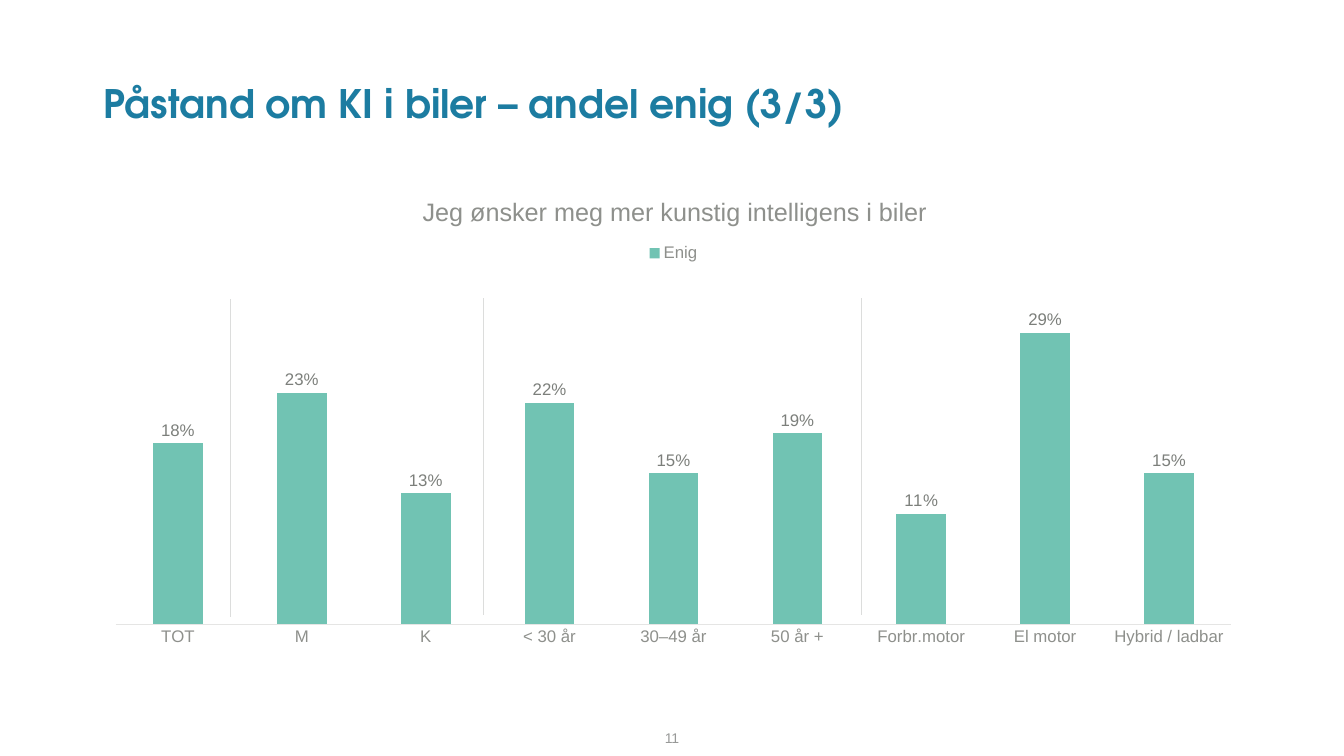
from lxml import etree
from pptx import Presentation
from pptx.chart.data import CategoryChartData
from pptx.dml.color import RGBColor
from pptx.enum.chart import XL_CHART_TYPE, XL_LABEL_POSITION, XL_LEGEND_POSITION, XL_TICK_MARK
from pptx.enum.shapes import MSO_CONNECTOR
from pptx.enum.text import MSO_ANCHOR, MSO_AUTO_SIZE, PP_ALIGN
from pptx.oxml.ns import qn
from pptx.util import Inches, Pt

COLUMNS = XL_CHART_TYPE.COLUMN_CLUSTERED
OUTSIDE_END = XL_LABEL_POSITION.OUTSIDE_END
LEGEND_TOP = XL_LEGEND_POSITION.TOP
NO_TICKS = XL_TICK_MARK.NONE
STRAIGHT = MSO_CONNECTOR.STRAIGHT
BOTTOM, MIDDLE = MSO_ANCHOR.BOTTOM, MSO_ANCHOR.MIDDLE
LEFT, CENTER = PP_ALIGN.LEFT, PP_ALIGN.CENTER
NO_AUTOFIT = MSO_AUTO_SIZE.NONE


def style_font(font, size, color, name="Arial", bold=False):
    font.size = Pt(size)
    font.name = name
    font.bold = bold
    font.color.rgb = RGBColor.from_string(color)


def place_part(part, index, **fractions):
    """Give a chart part a manual layout, in fractions of the chart area."""
    for old in part.findall(qn("c:layout")):
        part.remove(old)
    layout = etree.Element(qn("c:layout"))
    manual = etree.SubElement(layout, qn("c:manualLayout"))
    if "plotArea" in part.tag:
        etree.SubElement(manual, qn("c:layoutTarget")).set("val", "inner")
    for mode in ("xMode", "yMode"):
        etree.SubElement(manual, qn("c:" + mode)).set("val", "edge")
    for key, value in fractions.items():
        etree.SubElement(manual, qn("c:" + key)).set("val", str(value))
    part.insert(index, layout)


deck = Presentation()
deck.slide_width, deck.slide_height = Inches(13.33), Inches(7.5)
page = deck.slides.add_slide(deck.slide_layouts[5])

# Title
title = page.shapes.title
title.left, title.top = Inches(0.93), Inches(0.39)
title.width, title.height = Inches(11.52), Inches(0.92)
frame = title.text_frame
frame.auto_size = NO_AUTOFIT
frame.vertical_anchor = BOTTOM
para = frame.paragraphs[0]
para.alignment = LEFT
para.line_spacing = 0.9
span = para.add_run()
span.text = "Påstand om KI i biler – andel enig (3/3)"
style_font(span.font, 28, "1C7CA1", "TeX Gyre Adventor", True)

# Page number
box = page.shapes.add_textbox(Inches(6.29), Inches(7.15), Inches(0.75), Inches(0.35))
box.text_frame.word_wrap = True
box.text_frame.vertical_anchor = MIDDLE
para = box.text_frame.paragraphs[0]
para.alignment = CENTER
span = para.add_run()
span.text = "11"
style_font(span.font, 10, "989998")

# Share who agree, by group
data = CategoryChartData(number_format="0%")
data.categories = ["TOT", "M", "K", "< 30 år", "30–49 år", "50 år +",
                   "Forbr.motor", "El motor", "Hybrid / ladbar"]
data.add_series("Enig", [0.18, 0.23, 0.13, 0.22, 0.15, 0.19, 0.11, 0.29, 0.15])
chart = page.shapes.add_chart(COLUMNS, Inches(0.92), Inches(1.7),
                              Inches(11.52), Inches(4.78), data).chart
style_font(chart.font, 10, "515350")

plot = chart.plots[0]
plot.vary_by_categories = False
plot.gap_width = 150
plot.overlap = -25
bars = plot.series[0]
bars.format.fill.solid()
bars.format.fill.fore_color.rgb = RGBColor.from_string("71C3B3")
labels = bars.data_labels
labels.show_value = True
labels.number_format = "0%"
labels.number_format_is_linked = False
labels.position = OUTSIDE_END
style_font(labels.font, 12, "7C7F7B")

# Axes
groups = chart.category_axis
groups.major_tick_mark = NO_TICKS
groups.minor_tick_mark = NO_TICKS
groups.format.line.color.rgb = RGBColor.from_string("E5E5E4")
groups.format.line.width = Pt(0.75)
style_font(groups.tick_labels.font, 12, "8E908C")
shares = chart.value_axis
shares.minimum_scale, shares.maximum_scale = 0, 0.35
shares.has_major_gridlines = False
shares.visible = False

# Chart title and legend
chart.has_title = True
span = chart.chart_title.text_frame.paragraphs[0].add_run()
span.text = "Jeg ønsker meg mer kunstig intelligens i biler"
style_font(span.font, 18, "8E908C")
chart.has_legend = True
chart.legend.position = LEGEND_TOP
chart.legend.include_in_layout = False
style_font(chart.legend.font, 12, "8E908C")

root = chart.element.find(qn("c:chart"))
place_part(root.find(qn("c:title")), 1, x=0.28, y=0.04)
place_part(root.find(qn("c:legend")), 1, x=0.47, y=0.14, w=0.06, h=0.06)
place_part(root.find(qn("c:plotArea")), 0, x=0.02, y=0.21, w=0.96, h=0.73)

# Dividers between the groups
for x, top, bottom in [(2.28, 2.97, 6.12), (4.79, 2.96, 6.1), (8.54, 2.96, 6.1)]:
    divider = page.shapes.add_connector(STRAIGHT, Inches(x), Inches(top), Inches(x), Inches(bottom))
    divider.line.color.rgb = RGBColor.from_string("DCDDDC")
    divider.line.width = Pt(0.5)
    etree.SubElement(divider.element.spPr, qn("a:effectLst"))

deck.save("out.pptx")
